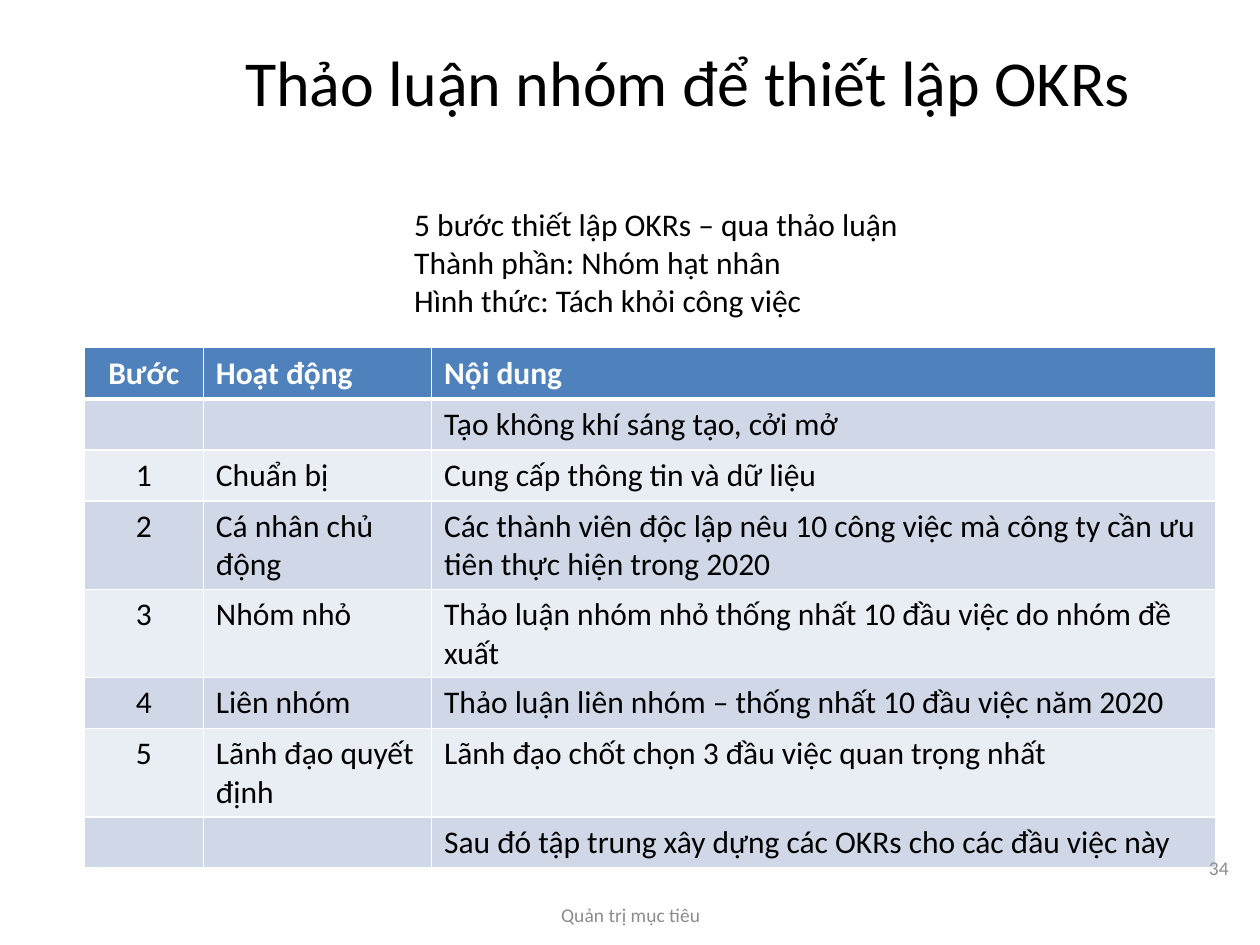
from lxml import etree
from pptx import Presentation
from pptx.dml.color import RGBColor
from pptx.enum.text import MSO_ANCHOR, PP_ALIGN
from pptx.oxml.ns import qn
from pptx.util import Cm, Pt

LEFT, CENTER, RIGHT = PP_ALIGN.LEFT, PP_ALIGN.CENTER, PP_ALIGN.RIGHT
TOP, MIDDLE = MSO_ANCHOR.TOP, MSO_ANCHOR.MIDDLE
FONT = "Calibri"
COLORS = {
    "text": "000000",
    "muted": "8C8C8C",
    "white": "FFFFFF",
    "header": "4F81BD",
    "band_dark": "D0D8E8",
    "band_light": "E9EDF4",
}
COLUMN_WIDTHS = (2.4, 4.6, 15.8)
ROW_HEIGHT = 1.03
STEPS = [
    ("Bước", "Hoạt động", "Nội dung"),
    ("", "", "Tạo không khí sáng tạo, cởi mở"),
    ("1", "Chuẩn bị", "Cung cấp thông tin và dữ liệu"),
    ("2", "Cá nhân chủ động",
     "Các thành viên độc lập nêu 10 công việc mà công ty cần ưu tiên thực hiện trong 2020"),
    ("3", "Nhóm nhỏ", "Thảo luận nhóm nhỏ thống nhất 10 đầu việc do nhóm đề xuất"),
    ("4", "Liên nhóm", "Thảo luận liên nhóm – thống nhất 10 đầu việc năm 2020"),
    ("5", "Lãnh đạo quyết định", "Lãnh đạo chốt chọn 3 đầu việc quan trọng nhất"),
    ("", "", "Sau đó tập trung xây dựng các OKRs cho các đầu việc này"),
]


def color(name):
    return RGBColor.from_string(COLORS[name])


def style_paragraph(para, size, color_name, align=LEFT, bold=False):
    para.alignment = align
    para.font.name = FONT
    para.font.size = Pt(size)
    para.font.bold = bold
    para.font.color.rgb = color(color_name)


def add_text(page, place, lines, size, color_name="text", align=LEFT, anchor=MIDDLE, wrap=True):
    box = page.shapes.add_textbox(*(Cm(length) for length in place))
    frame = box.text_frame
    frame.word_wrap = wrap
    frame.vertical_anchor = anchor
    frame.text = "\n".join(lines)
    for para in frame.paragraphs:
        style_paragraph(para, size, color_name, align)


def set_borders(cell, bottom_width):
    """Draw white lines round the cell; they must precede its fill in the XML."""
    properties = cell._tc.get_or_add_tcPr()
    widths = {"a:lnL": 1, "a:lnR": 1, "a:lnT": 1, "a:lnB": bottom_width}
    for position, (tag, width) in enumerate(widths.items()):
        line = etree.Element(qn(tag), w=str(Pt(width)))
        fill = etree.SubElement(line, qn("a:solidFill"))
        etree.SubElement(fill, qn("a:srgbClr"), val=COLORS["white"])
        properties.insert(position, line)


def add_steps_table(page, left, top):
    table = page.shapes.add_table(
        len(STEPS), len(COLUMN_WIDTHS), Cm(left), Cm(top),
        Cm(sum(COLUMN_WIDTHS)), Cm(ROW_HEIGHT * len(STEPS))).table
    for column, width in zip(table.columns, COLUMN_WIDTHS):
        column.width = Cm(width)
    for row_index, texts in enumerate(STEPS):
        table.rows[row_index].height = Cm(ROW_HEIGHT)
        is_header = row_index == 0
        band = "band_dark" if row_index % 2 else "band_light"
        for column_index, text in enumerate(texts):
            cell = table.cell(row_index, column_index)
            cell.text = text
            cell.fill.solid()
            cell.fill.fore_color.rgb = color("header" if is_header else band)
            set_borders(cell, 3 if is_header else 1)
            style_paragraph(cell.text_frame.paragraphs[0], 18,
                            "white" if is_header else "text",
                            LEFT if column_index else CENTER, is_header)


def main():
    deck = Presentation()
    deck.slide_width, deck.slide_height = Cm(25.4), Cm(19.05)
    page = deck.slides.add_slide(deck.slide_layouts[6])

    add_text(page, (2.44, 0.76, 22.86, 1.75), ["Thảo luận nhóm để thiết lập OKRs"],
             36.6, align=CENTER)
    add_steps_table(page, 1.7, 7.01)
    add_text(page, (8.69, 17.93, 8.05, 1.02), ["Quản trị mục tiêu"], 11.1, "muted", CENTER)
    add_text(page, (19.1, 16.99, 5.92, 1.02), ["34"], 11.1, "muted", RIGHT)
    add_text(page, (8.1, 4.01, 10.39, 2.57),
             ["5 bước thiết lập OKRs – qua thảo luận",
              "Thành phần: Nhóm hạt nhân",
              "Hình thức: Tách khỏi công việc"], 18, anchor=TOP, wrap=False)

    deck.save("out.pptx")


if __name__ == "__main__":
    main()
